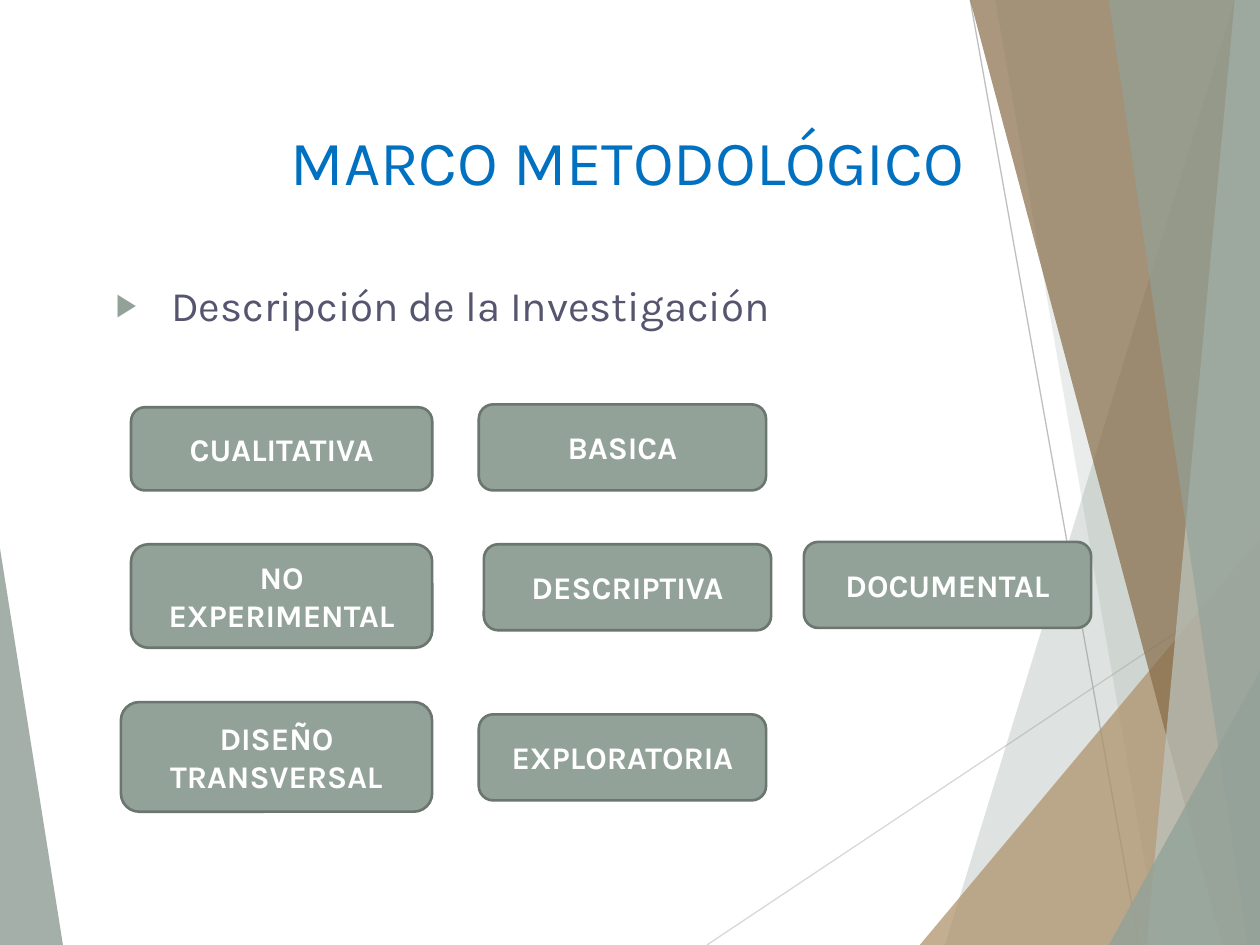
import pptx
import pptx.util
import pptx.dml.color
import pptx.enum.shapes
import pptx.enum.text
import pptx.oxml
import pptx.oxml.ns
import lxml.etree

FONT = "Karla"
COLORS = {
    "sage": "93A299", "mist": "BDC6C1", "tan": "AD8F67", "brown": "866B48",
    "edge": "6B766F", "title": "0070C0", "body": "55556F", "white": "FFFFFF",
    "pale": "D8D8D8", "grey": "BFBFBF",
}

# All positions are percentages of the box they are placed in.
WEDGE = ("sage", 85, [(0, 58.5), (4.9, 100), (0, 100)])
LINES = [("pale", 56.1, 100, 100, 61), ("grey", 77, 0, 90.4, 100)]
FACETS = [
    ("sage", 30, [(97.5, 0), (75.4, 100), (100, 100), (100, 0)]),
    ("sage", 20, [(78.8, 0), (91.9, 100), (100, 100), (100, 0)]),
    ("tan", 72, [(72.6, 100), (100, 57.2), (100, 100)]),
    ("brown", 70, [(76.7, 0), (97, 100), (100, 100), (100, 0)]),
    ("mist", 70, [(98.1, 0), (90.7, 100), (100, 100), (100, 0)]),
    ("sage", 65, [(88.3, 0), (98.6, 100), (100, 100), (99.8, 0)]),
    ("sage", 80, [(88.1, 100), (100, 71.3), (100, 100)]),
]
CARDS = [
    ("CUALITATIVA", 10.4, 43.1, 23.9, 8.8),
    ("DOCUMENTAL", 63.8, 57.35, 22.8, 9.1),
    ("EXPLORATORIA", 38, 75.6, 22.8, 9.1),
    ("NO EXPERIMENTAL", 10.4, 57.6, 23.9, 10.95),
    ("DISEÑO TRANSVERSAL", 9.6, 74.3, 24.7, 11.6),
    ("BASICA", 38, 42.8, 22.8, 9.1),
    ("DESCRIPTIVA", 38.4, 57.6, 22.8, 9.1),
]


def rgb(name):
    return pptx.dml.color.RGBColor.from_string(COLORS[name])


def within(box, x, y, w, h):
    """Turn percentages of a box into a left, top, width, height tuple."""
    left, top, width, height = box
    return (int(left + width * x / 100), int(top + height * y / 100),
            int(width * w / 100), int(height * h / 100))


def add_run(p, text, size, color, bold=False):
    r = p.add_run()
    r.text = text
    r.font.name = FONT
    r.font.size = pptx.util.Pt(size)
    r.font.bold = bold
    r.font.color.rgb = rgb(color)


def add_facet(s, box, color, opacity, points):
    left, top, width, height = box
    builder = s.shapes.build_freeform(*points[0], scale=(width / 100, height / 100))
    builder.add_line_segments(points[1:], close=True)
    sp = builder.convert_to_shape(left, top)
    sp.shadow.inherit = False
    sp.line.fill.background()
    sp.fill.solid()
    sp.fill.fore_color.rgb = rgb(color)
    clr = sp.element.find(".//" + pptx.oxml.ns.qn("a:srgbClr"))
    alpha = lxml.etree.SubElement(clr, pptx.oxml.ns.qn("a:alpha"))
    alpha.set("val", str(opacity * 1000))


def add_hairline(s, box, color, x1, y1, x2, y2):
    start = within(box, x1, y1, 0, 0)[:2]
    end = within(box, x2, y2, 0, 0)[:2]
    line = s.shapes.add_connector(pptx.enum.shapes.MSO_CONNECTOR.STRAIGHT, *start, *end)
    line.line.color.rgb = rgb(color)
    line.line.width = pptx.util.Pt(0.75)
    sp_pr = line.element.find(pptx.oxml.ns.qn("p:spPr"))
    lxml.etree.SubElement(sp_pr, pptx.oxml.ns.qn("a:effectLst"))


def add_backdrop(s, box):
    add_facet(s, box, *WEDGE)
    for line in LINES:
        add_hairline(s, box, *line)
    for facet in FACETS:
        add_facet(s, box, *facet)


def place_placeholder(sp, box):
    """Position a placeholder in front of the backdrop and return its paragraph."""
    sp.element.getparent().append(sp.element)
    sp.left, sp.top, sp.width, sp.height = box
    tf = sp.text_frame
    tf.word_wrap = True
    tf.auto_size = pptx.enum.text.MSO_AUTO_SIZE.NONE
    tf.vertical_anchor = pptx.enum.text.MSO_ANCHOR.TOP
    p = tf.paragraphs[0]
    p.space_before = pptx.util.Pt(0)
    return p


def add_title(s, box):
    p = place_placeholder(s.shapes.title, box)
    p.alignment = pptx.enum.text.PP_ALIGN.CENTER
    add_run(p, "MARCO METODOLÓGICO", 36, "title")


def add_body(s, box):
    p = place_placeholder(s.placeholders[1], box)
    p_pr = p._p.get_or_add_pPr()
    indent = pptx.util.Inches(0.38)
    p_pr.set("marL", str(indent))
    p_pr.set("indent", str(-indent))
    bu_clr = lxml.etree.SubElement(p_pr, pptx.oxml.ns.qn("a:buClr"))
    lxml.etree.SubElement(bu_clr, pptx.oxml.ns.qn("a:srgbClr")).set("val", COLORS["sage"])
    lxml.etree.SubElement(p_pr, pptx.oxml.ns.qn("a:buChar")).set("char", "▶")
    add_run(p, " ", 18, "body")
    add_run(p, "Descripción de la Investigación", 24, "body")


def add_card(s, box, text):
    sp = s.shapes.add_shape(pptx.enum.shapes.MSO_SHAPE.ROUNDED_RECTANGLE, *box)
    sp.adjustments[0] = 0.167
    sp.shadow.inherit = False
    sp.fill.solid()
    sp.fill.fore_color.rgb = rgb("sage")
    sp.line.color.rgb = rgb("edge")
    sp.line.width = pptx.util.Pt(1.5)
    tf = sp.text_frame
    tf.word_wrap = True
    tf.vertical_anchor = pptx.enum.text.MSO_ANCHOR.MIDDLE
    p = tf.paragraphs[0]
    p.alignment = pptx.enum.text.PP_ALIGN.CENTER
    add_run(p, text, 18, "white", bold=True)


def main():
    prs = pptx.Presentation()
    prs.slide_width = pptx.util.Inches(10)
    prs.slide_height = pptx.util.Inches(7.5)
    page = (0, 0, prs.slide_width, prs.slide_height)
    s = prs.slides.add_slide(prs.slide_layouts[1])
    add_backdrop(s, page)
    add_title(s, within(page, 11.4, 12.3, 76.8, 16.7))
    add_body(s, within(page, 8.2, 28.9, 83.6, 57.1))
    for text, *area in CARDS:
        add_card(s, within(page, *area), text)
    prs.save("out.pptx")


if __name__ == "__main__":
    main()
